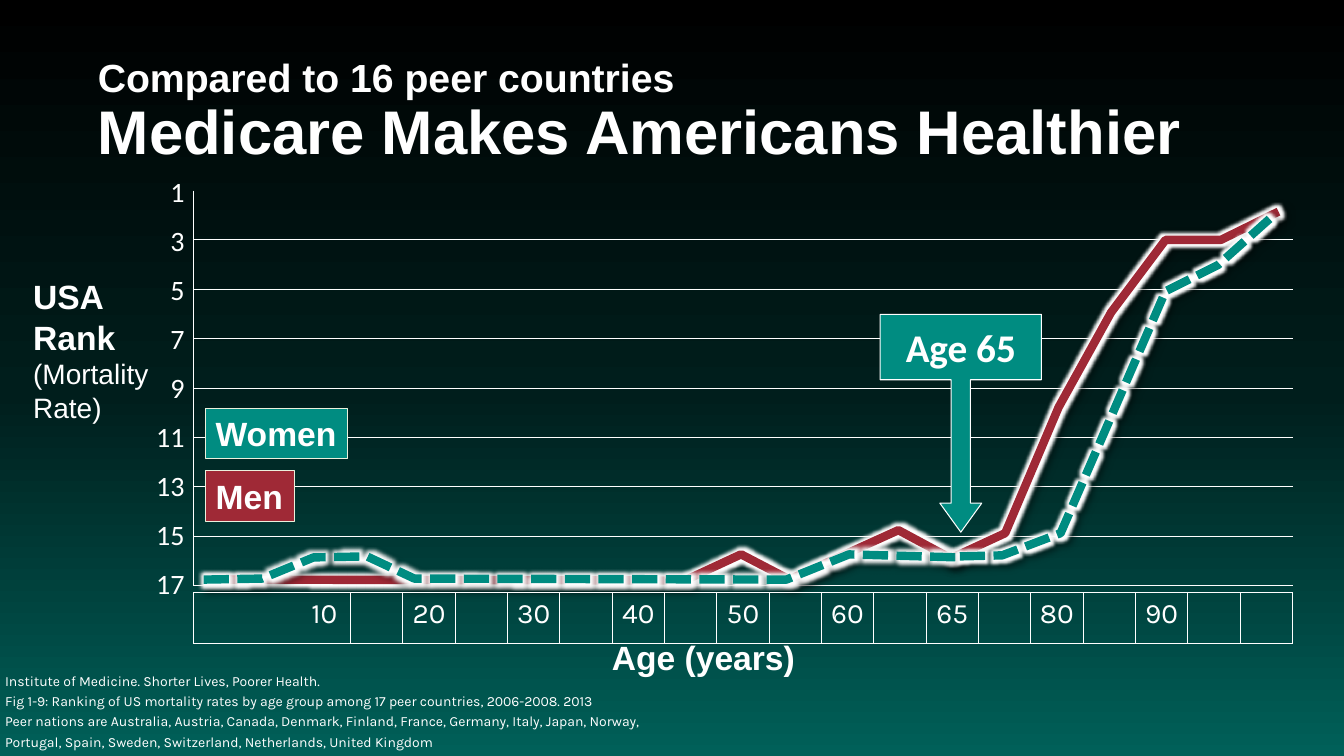
import copy

import pptx
import pptx.dml.color
import pptx.enum.dml
import pptx.enum.shapes
import pptx.enum.text
import pptx.oxml
import pptx.oxml.ns
import pptx.util
from pptx.util import Inches

RGBColor = pptx.dml.color.RGBColor
WHITE = RGBColor(0xFF, 0xFF, 0xFF)
CREAM = RGBColor(0xEB, 0xF1, 0xDD)
TEAL = RGBColor(0x00, 0x8C, 0x81)
RED = RGBColor(0x9F, 0x29, 0x36)
BACKGROUND = [(0, RGBColor(0, 0, 0)), (0.52, RGBColor(0x00, 0x1E, 0x1C)),
              (1, RGBColor(0x00, 0x60, 0x59))]

SHAPE = pptx.enum.shapes.MSO_SHAPE
ALIGN = pptx.enum.text.PP_ALIGN
ANCHOR = pptx.enum.text.MSO_ANCHOR
AUTO_SIZE = pptx.enum.text.MSO_AUTO_SIZE
DASH = pptx.enum.dml.MSO_LINE.SQUARE_DOT
PLAIN_TABLE = "{2D5ABB26-0587-4C30-8999-92F81FD0307C}"
NAMESPACE = pptx.oxml.ns.nsdecls("a")
qn = pptx.oxml.ns.qn

GLOW = f'<a:glow {NAMESPACE} rad="63500"><a:srgbClr val="FFFFFF"/></a:glow>'
SHADOW = (f'<a:outerShdw {NAMESPACE} blurRad="50800" dist="38100" dir="2700000">'
          '<a:srgbClr val="000000"><a:alpha val="40000"/></a:srgbClr></a:outerShdw>')


class RankSlide:
    def __init__(self, presentation):
        self.slide = presentation.slides.add_slide(presentation.slide_layouts[5])
        self.shapes = self.slide.shapes

    def background(self, stops):
        fill = self.slide.background.fill
        fill.gradient()
        fill.gradient_angle = 270
        stop_list = self.slide.element.find(".//" + qn("a:gsLst"))
        stop_list.append(copy.deepcopy(stop_list[0]))
        for stop, (position, color) in zip(fill.gradient_stops, stops):
            stop.position = position
            stop.color.rgb = color

    def font(self, runs, size, name="Arial", bold=False):
        for run in runs:
            run.font.size = pptx.util.Pt(size)
            run.font.name = name
            run.font.bold = bold
            run.font.color.rgb = WHITE

    def place(self, shape, left, top, width, height):
        shape.left, shape.top = Inches(left), Inches(top)
        shape.width, shape.height = Inches(width), Inches(height)

    def frame(self, shape, anchor, margin=None):
        text_frame = shape.text_frame
        text_frame.vertical_anchor = anchor
        if margin is not None:
            text_frame.margin_left = text_frame.margin_right = Inches(margin)
            text_frame.margin_top = text_frame.margin_bottom = Inches(margin)
        return text_frame

    def title(self, box, lines, sizes):
        shape = self.shapes.title
        self.place(shape, *box)
        text_frame = self.frame(shape, ANCHOR.MIDDLE, 0.05)
        text_frame.auto_size = AUTO_SIZE.NONE
        text_frame.text = "\v".join(lines)
        paragraph = text_frame.paragraphs[0]
        paragraph.alignment = ALIGN.LEFT
        paragraph.line_spacing = 0.9
        for run, size in zip(paragraph.runs, sizes):
            self.font([run], size, bold=True)

    def text(self, box, lines, name="Arial", anchor=ANCHOR.TOP, margin=None,
             spacing=None, wrap=True):
        """Add a text box; each line is (text, size, bold)."""
        shape = self.shapes.add_textbox(*map(Inches, box))
        text_frame = self.frame(shape, anchor, margin)
        text_frame.word_wrap = wrap
        text_frame.text = "\n".join(line[0] for line in lines)
        for paragraph, (_, size, bold) in zip(text_frame.paragraphs, lines):
            if spacing:
                paragraph.line_spacing = spacing
            self.font(paragraph.runs, size, name, bold)

    def label(self, kind, box, text, fill, line, size=24, name="Arial",
              alignment=ALIGN.LEFT, anchor=ANCHOR.TOP, adjustments=()):
        shape = self.shapes.add_shape(kind, *map(Inches, box))
        shape.shadow.inherit = False
        for index, value in enumerate(adjustments):
            shape.adjustments[index] = value
        shape.fill.solid()
        shape.fill.fore_color.rgb = fill
        shape.line.color.rgb = line
        shape.line.width = pptx.util.Pt(0.75)
        text_frame = self.frame(shape, anchor)
        text_frame.word_wrap = kind != SHAPE.RECTANGLE
        text_frame.text = text
        paragraph = text_frame.paragraphs[0]
        paragraph.alignment = alignment
        self.font(paragraph.runs, size, name, bold=True)

    def curve(self, points, color, dash=None):
        vertices = [(Inches(x), Inches(y)) for x, y in points]
        builder = self.shapes.build_freeform(*vertices[0], scale=1.0)
        builder.add_line_segments(vertices[1:], close=False)
        shape = builder.convert_to_shape()
        shape.fill.background()
        shape.line.color.rgb = color
        shape.line.width = pptx.util.Pt(6)
        shape.line.dash_style = dash
        shape.shadow.inherit = False
        effects = shape.element.spPr.find(qn("a:effectLst"))
        for effect in (GLOW, SHADOW):
            effects.append(pptx.oxml.parse_xml(effect))

    def table(self, box, rows, borders, size=20, name="Calibri",
              alignment=ALIGN.CENTER, margin=None):
        """Add a plain table; borders(column) gives the sides that are drawn."""
        row_count, column_count = len(rows), len(rows[0])
        frame = self.shapes.add_table(row_count, column_count, *map(Inches, box))
        table = frame.table
        table.first_row = table.horz_banding = False
        frame.element.find(".//" + qn("a:tableStyleId")).text = PLAIN_TABLE
        for row, values in zip(table.rows, rows):
            row.height = Inches(box[3] / row_count)
            for column, value in enumerate(values):
                cell = row.cells[column]
                cell.fill.background()
                if margin is not None:
                    cell.margin_left = cell.margin_right = Inches(margin)
                cell.text = value
                paragraph = cell.text_frame.paragraphs[0]
                paragraph.alignment = alignment
                self.font(paragraph.runs, size, name)
                self.borders(cell, borders(column))

    def borders(self, cell, sides):
        properties = cell._tc.get_or_add_tcPr()
        for index, side in enumerate(sides):
            properties.insert(index, pptx.oxml.parse_xml(
                f'<a:ln{side} {NAMESPACE} w="9525"><a:solidFill>'
                f'<a:srgbClr val="FFFFFF"/></a:solidFill></a:ln{side}>'))


def main():
    presentation = pptx.Presentation()
    presentation.slide_width = Inches(13.33)
    presentation.slide_height = Inches(7.5)
    page = RankSlide(presentation)
    page.background(BACKGROUND)

    # Title and source
    page.title((0.92, 0.4, 11.5, 1.45),
               ["Compared to 16 peer countries", "Medicare Makes Americans Healthier"],
               [28, 44])
    source = [
        "Institute of Medicine. Shorter Lives, Poorer Health.",
        "Fig 1-9: Ranking of US mortality rates by age group among 17 peer countries, "
        "2006-2008. 2013",
        "Peer nations are Australia, Austria, Canada, Denmark, Finland, France, Germany, "
        "Italy, Japan, Norway, Portugal, Spain, Sweden, Switzerland, Netherlands, "
        "United Kingdom",
    ]

    # Grid and rank axis
    page.table((1.92, 1.89, 10.9, 3.92), [[""]] * 8, lambda column: "LB")
    page.text((0, 6.58, 6.64, 0.92), [(line, 10, False) for line in source],
              "Karla", ANCHOR.MIDDLE, 0.05, 1.2)
    page.table((0.8, 1.69, 1.13, 4.38), [[str(rank)] for rank in range(1, 18, 2)],
               lambda column: "", alignment=ALIGN.RIGHT)
    page.text((5.97, 6.27, 2.04, 0.5), [("Age (years)", 24, True)], wrap=False)

    # Curves, legend and callout
    page.curve([(2.04, 5.75), (6.79, 5.76), (7.35, 5.5), (7.83, 5.75), (8.91, 5.26),
                (9.43, 5.54)], RED)
    page.label(SHAPE.RECTANGLE, (2.04, 4.67, 0.88, 0.5), "Men", RED, CREAM)
    page.label(SHAPE.RECTANGLE, (2.04, 4.05, 1.41, 0.5), "Women", TEAL, CREAM)
    page.label(SHAPE.DOWN_ARROW_CALLOUT, (8.73, 3.12, 1.6, 2.16), "Age 65", TEAL, WHITE,
               28, "Calibri", ALIGN.CENTER, ANCHOR.MIDDLE, (0.12, 0.13, 0.18, 0.3))
    page.curve([(9.43, 5.54), (9.97, 5.29), (10.5, 4.04), (11.02, 3.1), (11.56, 2.38),
                (12.11, 2.38), (12.68, 2.1)], RED)
    page.curve([(2.02, 5.75), (2.6, 5.74), (3.11, 5.53), (3.64, 5.52), (4.11, 5.74),
                (7.8, 5.75), (8.42, 5.5), (9.52, 5.53)], TEAL, DASH)
    page.curve([(9.52, 5.52), (9.94, 5.51), (10.52, 5.29), (11.56, 2.89), (12.08, 2.63),
                (12.65, 2.12)], TEAL, DASH)

    # Age axis: a label in every second cell, the first three cells undivided
    ages = [""] * 21
    ages[2:19:2] = ["10", "20", "30", "40", "50", "60", "65", "80", "90"]
    page.table((1.92, 5.88, 10.9, 0.5), [ages],
               lambda column: {0: "LTB", 1: "TB"}.get(column, "RTB"),
               name="Karla", margin=0.05)
    page.text((0.23, 2.69, 1.36, 1.58),
              [("USA", 24, True), ("Rank", 24, True), ("(Mortality Rate)", 20, False)])

    presentation.save("out.pptx")


if __name__ == "__main__":
    main()
